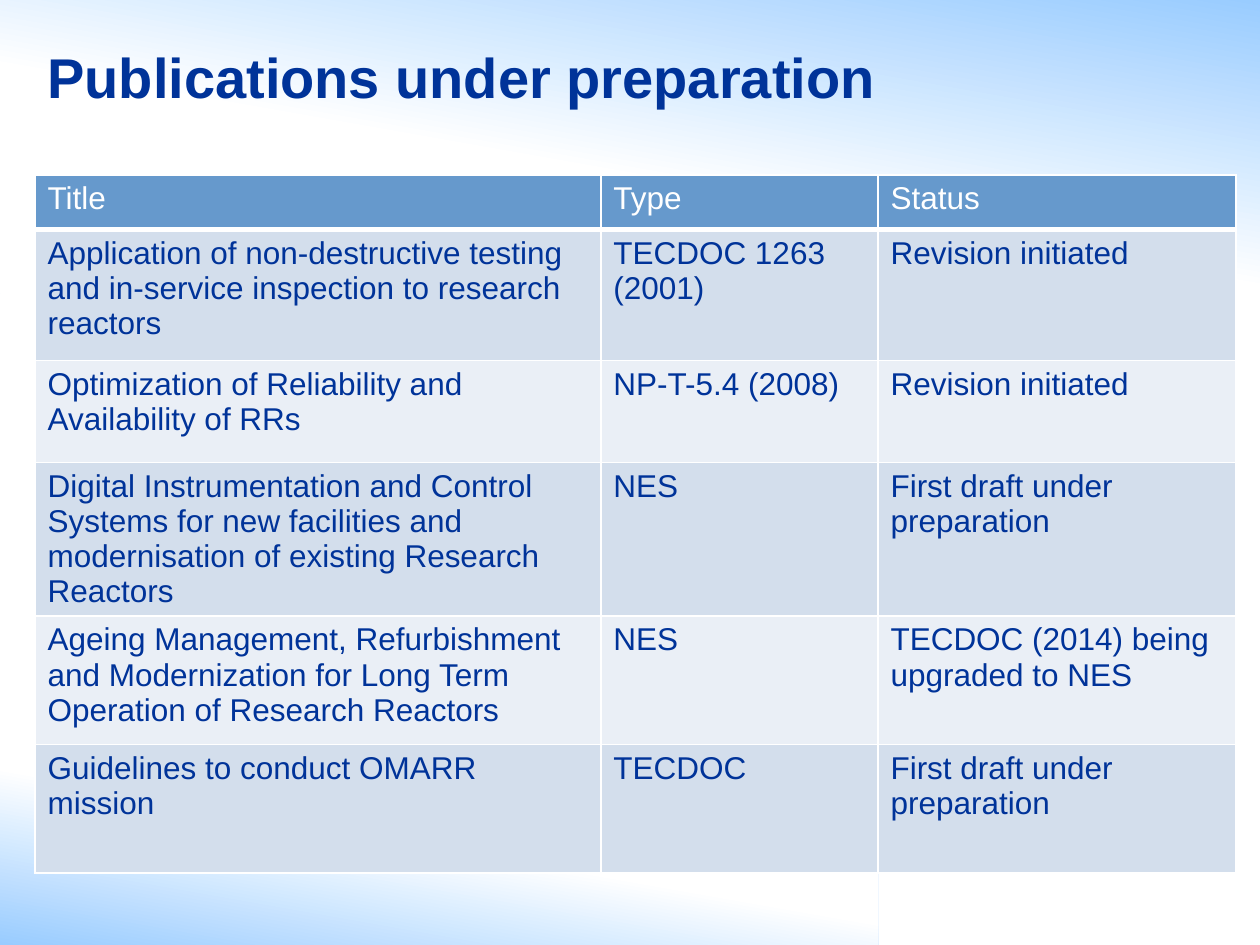
from dataclasses import dataclass

import pptx
import pptx.dml.color
import pptx.enum.shapes
import pptx.enum.text
import pptx.oxml
import pptx.oxml.ns
import pptx.util

Pt = pptx.util.Pt


def rgb(value):
    return pptx.dml.color.RGBColor.from_string(value)


@dataclass(frozen=True)
class Theme:
    font: str = "Arial"
    title_size: float = 32
    body_size: float = 18
    ink: str = "003399"
    white: str = "FFFFFF"
    sky: str = "99CCFF"
    header: str = "6699CC"
    bands: tuple = ("D3DEEC", "EAEFF6")
    rule: float = 1
    header_rule: float = 3


THEME = Theme()

COLUMN_WIDTHS = (323.3, 158.4, 204.5)
ROW_HEIGHTS = (31, 74.9, 58.3, 58.3, 73.4, 73.4)
PUBLICATIONS = (
    ("Title", "Type", "Status"),
    ("Application of non-destructive testing and in-service inspection to research reactors",
     "TECDOC 1263 (2001)", "Revision initiated"),
    ("Optimization of Reliability and Availability of RRs",
     "NP-T-5.4 (2008)", "Revision initiated"),
    ("Digital Instrumentation and Control Systems for new facilities and "
     "modernisation of existing Research Reactors",
     "NES", "First draft under preparation"),
    ("Ageing Management, Refurbishment and Modernization for Long Term "
     "Operation of Research Reactors",
     "NES", "TECDOC (2014) being upgraded to NES"),
    ("Guidelines to conduct OMARR mission",
     "TECDOC", "First draft under preparation"),
)


def add_text(paragraph, text, size, color, bold=False):
    run = paragraph.add_run()
    run.text = text
    run.font.name = THEME.font
    run.font.size = Pt(size)
    run.font.bold = bold
    run.font.color.rgb = rgb(color)


def add_glow(slide, box, angle, fade_end):
    glow = slide.shapes.add_shape(
        pptx.enum.shapes.MSO_SHAPE.RECTANGLE, *map(Pt, box))
    glow.shadow.inherit = False
    glow.line.fill.background()
    glow.fill.gradient()
    glow.fill.gradient_angle = angle
    stops = zip(glow.fill.gradient_stops, (THEME.sky, THEME.white), (0, fade_end))
    for stop, color, position in stops:
        stop.color.rgb = rgb(color)
        stop.position = position


def add_title(slide, box, text):
    title = slide.shapes.add_textbox(*map(Pt, box))
    frame = title.text_frame
    frame.word_wrap = True
    frame.vertical_anchor = pptx.enum.text.MSO_ANCHOR.MIDDLE
    add_text(frame.paragraphs[0], text, THEME.title_size, THEME.ink, bold=True)


def set_borders(cell, widths):
    properties = cell._tc.get_or_add_tcPr()
    namespace = pptx.oxml.ns.nsdecls("a")
    for index, (side, width) in enumerate(widths.items()):
        border = pptx.oxml.parse_xml(
            f'<a:{side} {namespace} w="{Pt(width)}"><a:solidFill>'
            f'<a:srgbClr val="{THEME.white}"/></a:solidFill></a:{side}>')
        properties.insert(index, border)


def add_publications(slide, box):
    table = slide.shapes.add_table(
        len(ROW_HEIGHTS), len(COLUMN_WIDTHS), *map(Pt, box)).table
    for column, width in zip(table.columns, COLUMN_WIDTHS):
        column.width = Pt(width)
    for index, (row, height, entries) in enumerate(
            zip(table.rows, ROW_HEIGHTS, PUBLICATIONS)):
        row.height = Pt(height)
        heading = index == 0
        fill = THEME.header if heading else THEME.bands[(index - 1) % 2]
        borders = {
            "lnL": THEME.rule,
            "lnR": THEME.rule,
            "lnT": THEME.header_rule if index == 1 else THEME.rule,
            "lnB": THEME.header_rule if heading else THEME.rule,
        }
        for cell, entry in zip(row.cells, entries):
            cell.fill.solid()
            cell.fill.fore_color.rgb = rgb(fill)
            set_borders(cell, borders)
            add_text(cell.text_frame.paragraphs[0], entry, THEME.body_size,
                     THEME.white if heading else THEME.ink)


def main():
    deck = pptx.Presentation()
    deck.slide_width, deck.slide_height = Pt(720), Pt(540)
    slide = deck.slides.add_slide(deck.slide_layouts[6])
    add_glow(slide, (0, 417.6, 501.8, 122.4), angle=80, fade_end=0.48)
    add_glow(slide, (0, 0, 720, 167.8), angle=260, fade_end=0.56)
    add_publications(
        slide, (20, 100, sum(COLUMN_WIDTHS), sum(ROW_HEIGHTS)))
    add_title(slide, (20, 9.4, 521.3, 67.7), "Publications under preparation")
    deck.save("out.pptx")


if __name__ == "__main__":
    main()
